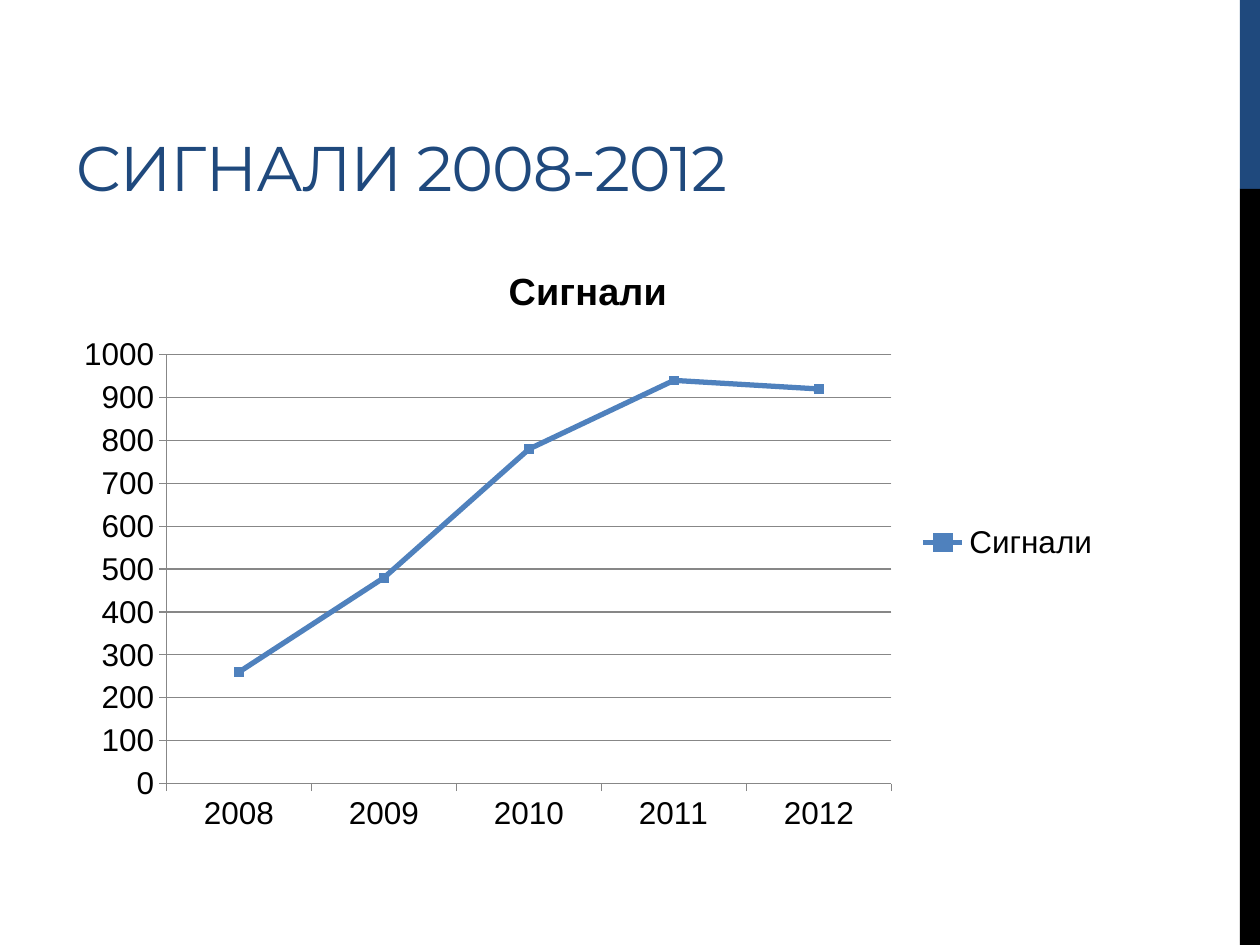
from pptx import Presentation
from pptx.chart import data
from pptx.dml import color
from pptx.enum import chart as kinds, shapes, text
from pptx.util import Pt

BLUE, BLACK, GRAY, LINE = "1F497D", "000000", "878787", "4F81BD"


def paint(value):
    return color.RGBColor.from_string(value)


def assign(obj, form):
    for key, value in form.items():
        setattr(obj, key, value)


class Deck:
    def __init__(self, wide, high):
        self.deck = Presentation()
        assign(self.deck, {"slide_width": Pt(wide), "slide_height": Pt(high)})
        self.slide = self.deck.slides.add_slide(self.deck.slide_layouts[5])

    def font(self, font, size, tint, face, bold=False):
        assign(font, {"size": Pt(size), "name": face, "bold": bold})
        font.color.rgb = paint(tint)

    def stroke(self, line, tint, width):
        line.color.rgb = paint(tint)
        line.width = Pt(width)

    def bar(self, left, top, wide, high, tint):
        box = self.slide.shapes.add_shape(
            shapes.MSO_SHAPE.RECTANGLE, *map(Pt, (left, top, wide, high)))
        box.shadow.inherit = False
        box.fill.solid()
        box.fill.fore_color.rgb = paint(tint)
        box.line.fill.background()

    def title(self, words, left, top, wide, high):
        box = self.slide.shapes.title
        assign(box, {"left": Pt(left), "top": Pt(top),
                     "width": Pt(wide), "height": Pt(high)})
        frame = box.text_frame
        assign(frame, {"text": words, "word_wrap": True,
                       "auto_size": text.MSO_AUTO_SIZE.NONE,
                       "vertical_anchor": text.MSO_ANCHOR.BOTTOM})
        para = frame.paragraphs[0]
        para.alignment = text.PP_ALIGN.LEFT
        run = para.runs[0]
        self.font(run.font, 36, BLUE, "Montserrat")
        run.font._element.set("spc", "-60")

    def chart(self, name, cats, values, left, top, wide, high):
        table = data.CategoryChartData()
        table.categories = cats
        table.add_series(name, values)
        chart = self.slide.shapes.add_chart(
            kinds.XL_CHART_TYPE.LINE_MARKERS,
            *map(Pt, (left, top, wide, high)), table).chart
        self.font(chart.font, 18, BLACK, "Arial")
        assign(chart, {"has_title": True, "has_legend": True})
        head = chart.chart_title.text_frame
        head.text = name
        self.font(head.paragraphs[0].runs[0].font, 21.6, BLACK, "Arial", True)
        assign(chart.legend, {"position": kinds.XL_LEGEND_POSITION.RIGHT,
                              "include_in_layout": False})
        for axis in (chart.category_axis, chart.value_axis):
            axis.major_tick_mark = kinds.XL_TICK_MARK.OUTSIDE
            self.stroke(axis.format.line, GRAY, 0.75)
        assign(chart.value_axis, {"minimum_scale": 0, "maximum_scale": 1000,
                                  "major_unit": 100,
                                  "has_major_gridlines": True})
        self.stroke(chart.value_axis.major_gridlines.format.line, GRAY, 0.75)
        plot = chart.plots[0]
        plot.vary_by_categories = False
        row = plot.series[0]
        row.smooth = False
        self.stroke(row.format.line, LINE, 3)
        mark = row.marker
        assign(mark, {"style": kinds.XL_MARKER_STYLE.SQUARE, "size": 5})
        mark.format.fill.solid()
        mark.format.fill.fore_color.rgb = paint(LINE)
        self.stroke(mark.format.line, LINE, 0.75)


def main():
    page = Deck(720, 540)
    page.bar(708.5, 0, 11.5, 108, BLUE)
    page.bar(708.5, 108, 11.5, 432, BLACK)
    page.title("СИГНАЛИ 2008-2012", 36, 12, 456, 108)
    page.chart("Сигнали", [str(year) for year in range(2008, 2013)],
               (260, 480, 780, 940, 920), 36, 138, 600, 344)
    page.deck.save("out.pptx")


if __name__ == "__main__":
    main()
